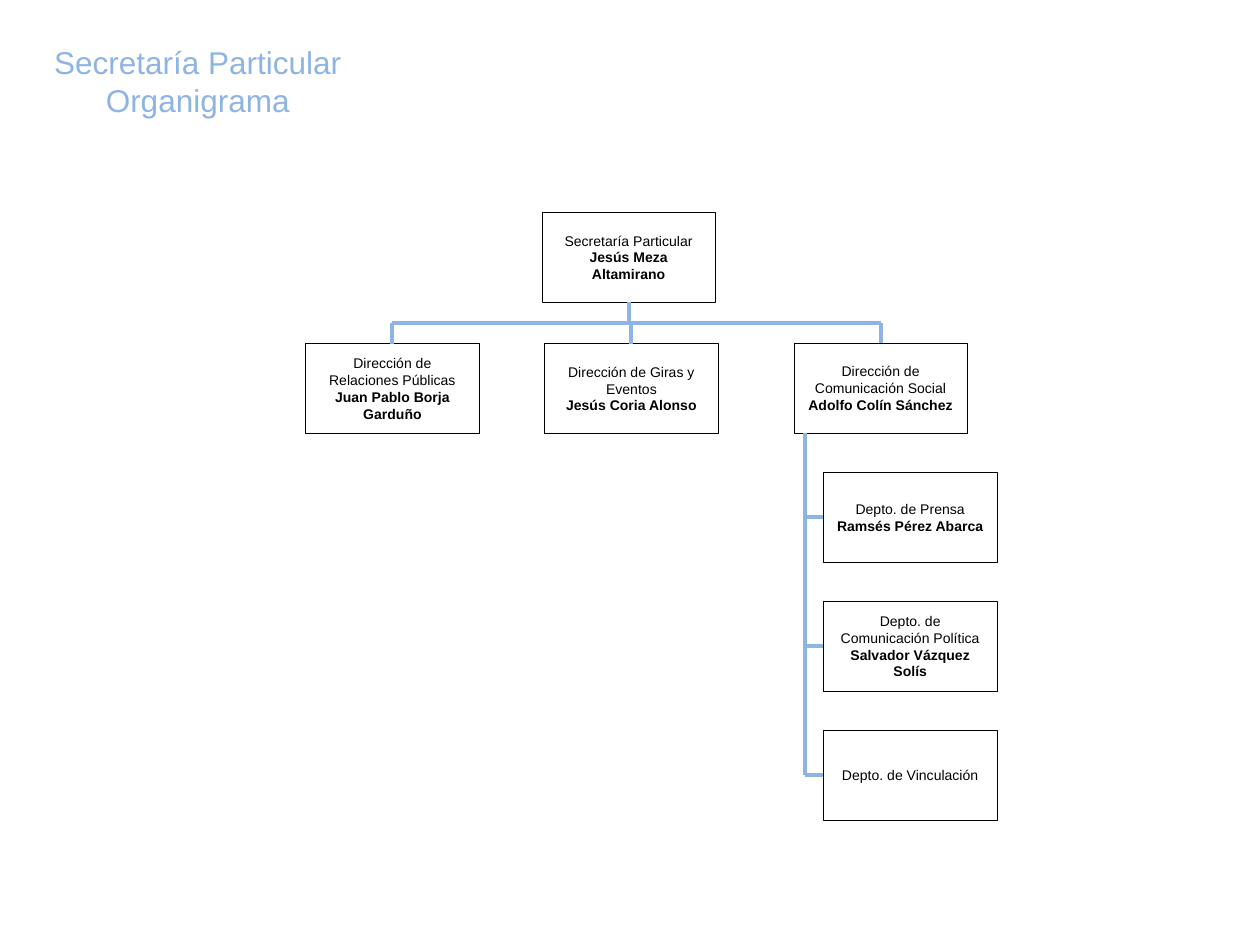
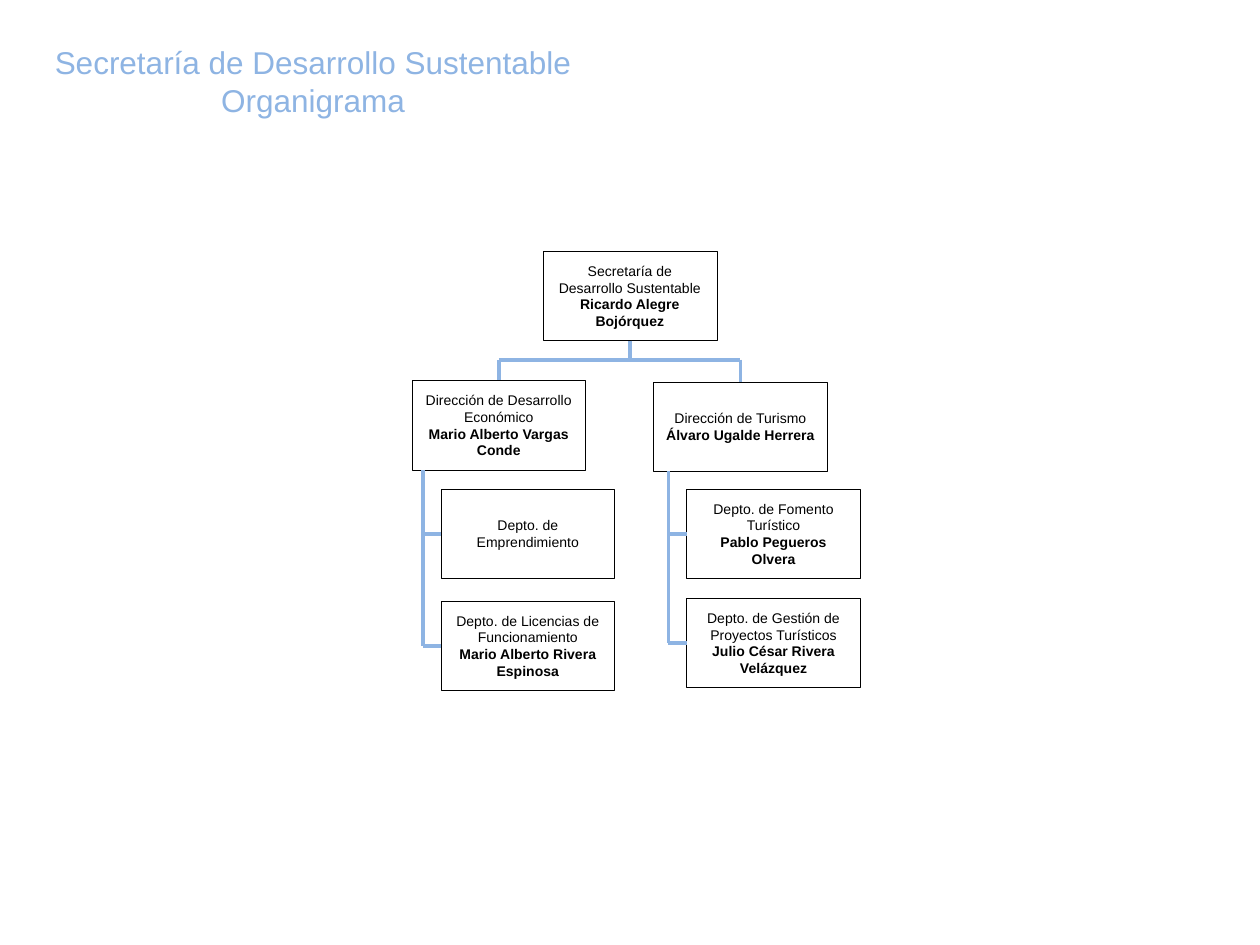
from dataclasses import dataclass

import pptx
import pptx.dml.color
import pptx.enum.shapes
import pptx.enum.text
import pptx.oxml
import pptx.oxml.ns
import pptx.presentation
import pptx.shapes.autoshape
import pptx.shapes.connector
import pptx.slide
import pptx.text.text
import pptx.util

Pt = pptx.util.Pt
RGBColor = pptx.dml.color.RGBColor
TOP, LEFT, BOTTOM = 0, 1, 2
TITLE_ONLY_LAYOUT = 5


@dataclass(frozen=True)
class Theme:
    accent: RGBColor = RGBColor(0x8E, 0xB4, 0xE3)
    ink: RGBColor = RGBColor(0, 0, 0)
    paper: RGBColor = RGBColor(255, 255, 255)
    font: str = "Arial"
    title_size: float = 18
    box_size: float = 8
    border_width: float = 0.25
    link_width: float = 2.25
    box_width: float = 99.3
    box_height: float = 51.2
    title_top: float = 20.9
    title_height: float = 51.1


@dataclass(frozen=True)
class Post:
    office: str
    holder: str = ""


@dataclass(frozen=True)
class Departments:
    spine: float
    left: float
    top: float
    pitch: float
    posts: tuple[Post, ...]


@dataclass(frozen=True)
class Direction:
    post: Post
    left: float
    top: float
    departments: Departments | None = None


@dataclass(frozen=True)
class Chart:
    title: str
    title_left: float
    title_width: float
    head: Direction
    bus: float
    directions: tuple[Direction, ...]


THEME = Theme()

CHARTS = (
    Chart(
        "Secretaría Particular", 22.3, 181.4,
        Direction(Post("Secretaría Particular", "Jesús Meza Altamirano"), 309.6, 121.4),
        184.7,
        (
            Direction(Post("Dirección de Relaciones Públicas", "Juan Pablo Borja Garduño"), 174.6, 196.4),
            Direction(Post("Dirección de Giras y Eventos", "Jesús Coria Alonso"), 311.2, 196.4),
            Direction(
                Post("Dirección de Comunicación Social", "Adolfo Colín Sánchez"), 453.6, 196.2,
                Departments(460.1, 470.5, 270, 73.7, (
                    Post("Depto. de Prensa", "Ramsés Pérez Abarca"),
                    Post("Depto. de Comunicación Política", "Salvador Vázquez Solís"),
                    Post("Depto. de Vinculación"),
                )),
            ),
        ),
    ),
    Chart(
        "Secretaría de Desarrollo Sustentable", 21.6, 314.6,
        Direction(Post("Secretaría de Desarrollo Sustentable", "Ricardo Alegre Bojórquez"), 310.3, 143.5),
        205.5,
        (
            Direction(
                Post("Dirección de Desarrollo Económico", "Mario Alberto Vargas Conde"), 235.4, 217.4,
                Departments(241.9, 252, 279.4, 64, (
                    Post("Depto. de Emprendimiento"),
                    Post("Depto. de Licencias de Funcionamiento", "Mario Alberto Rivera Espinosa"),
                )),
            ),
            Direction(
                Post("Dirección de Turismo", "Álvaro Ugalde Herrera"), 373.5, 218.2,
                Departments(382, 392.4, 279.4, 62.4, (
                    Post("Depto. de Fomento Turístico", "Pablo Pegueros Olvera"),
                    Post("Depto. de Gestión de Proyectos Turísticos", "Julio César Rivera Velázquez"),
                )),
            ),
        ),
    ),
)


def add_line_of_text(
    paragraph: pptx.text.text._Paragraph, text: str, size: float, color: RGBColor, bold: bool = False
) -> None:
    paragraph.alignment = pptx.enum.text.PP_ALIGN.CENTER
    run = paragraph.add_run()
    run.text = text
    run.font.name = THEME.font
    run.font.size = Pt(size)
    run.font.bold = bold
    run.font.color.rgb = color


def draw_title(slide: pptx.slide.Slide, chart: Chart) -> None:
    title = slide.shapes.title
    title.left, title.top = Pt(chart.title_left), Pt(THEME.title_top)
    title.width, title.height = Pt(chart.title_width), Pt(THEME.title_height)
    frame = title.text_frame
    frame.word_wrap = True
    frame.auto_size = pptx.enum.text.MSO_AUTO_SIZE.NONE
    frame.vertical_anchor = pptx.enum.text.MSO_ANCHOR.TOP
    add_line_of_text(frame.paragraphs[0], chart.title, THEME.title_size, THEME.accent)
    add_line_of_text(frame.add_paragraph(), "Organigrama", THEME.title_size, THEME.accent)


def draw_post(slide: pptx.slide.Slide, post: Post, left: float, top: float) -> pptx.shapes.autoshape.Shape:
    box = slide.shapes.add_shape(
        pptx.enum.shapes.MSO_SHAPE.RECTANGLE,
        Pt(left), Pt(top), Pt(THEME.box_width), Pt(THEME.box_height),
    )
    box.shadow.inherit = False
    box.fill.solid()
    box.fill.fore_color.rgb = THEME.paper
    box.line.color.rgb = THEME.ink
    box.line.width = Pt(THEME.border_width)
    frame = box.text_frame
    frame.word_wrap = True
    frame.vertical_anchor = pptx.enum.text.MSO_ANCHOR.MIDDLE
    add_line_of_text(frame.paragraphs[0], post.office, THEME.box_size, THEME.ink)
    if post.holder:
        add_line_of_text(frame.add_paragraph(), post.holder, THEME.box_size, THEME.ink, bold=True)
    return box


def draw_link(
    slide: pptx.slide.Slide, start_x: float, start_y: float, end_x: float, end_y: float
) -> pptx.shapes.connector.Connector:
    link = slide.shapes.add_connector(
        pptx.enum.shapes.MSO_CONNECTOR.STRAIGHT, Pt(start_x), Pt(start_y), Pt(end_x), Pt(end_y)
    )
    link.line.color.rgb = THEME.accent
    link.line.width = Pt(THEME.link_width)
    properties = link._element.spPr
    properties.append(pptx.oxml.parse_xml(f"<a:effectLst {pptx.oxml.ns.nsdecls('a')}/>"))
    return link


def draw_departments(slide: pptx.slide.Slide, departments: Departments, spine_top: float) -> None:
    middle = departments.top + THEME.box_height / 2
    spine_bottom = middle + departments.pitch * (len(departments.posts) - 1)
    draw_link(slide, departments.spine, spine_top, departments.spine, spine_bottom)
    for index, post in enumerate(departments.posts):
        offset = index * departments.pitch
        box = draw_post(slide, post, departments.left, departments.top + offset)
        branch = draw_link(slide, departments.spine, middle + offset, departments.left, middle + offset)
        branch.end_connect(box, LEFT)


def draw_chart(slide: pptx.slide.Slide, chart: Chart) -> None:
    draw_title(slide, chart)
    half_width = THEME.box_width / 2
    head = chart.head
    head_box = draw_post(slide, head.post, head.left, head.top)
    trunk_x = head.left + half_width
    trunk = draw_link(slide, trunk_x, head.top + THEME.box_height, trunk_x, chart.bus)
    trunk.begin_connect(head_box, BOTTOM)
    for direction in chart.directions:
        box = draw_post(slide, direction.post, direction.left, direction.top)
        drop_x = direction.left + half_width
        drop = draw_link(slide, drop_x, chart.bus, drop_x, direction.top)
        drop.end_connect(box, TOP)
        if direction.departments:
            draw_departments(slide, direction.departments, direction.top + THEME.box_height)
    first, last = chart.directions[0], chart.directions[-1]
    draw_link(slide, first.left + half_width, chart.bus, last.left + half_width, chart.bus)


def main() -> None:
    presentation = pptx.Presentation()
    presentation.slide_width, presentation.slide_height = Pt(720), Pt(540)
    for chart in CHARTS:
        slide = presentation.slides.add_slide(presentation.slide_layouts[TITLE_ONLY_LAYOUT])
        draw_chart(slide, chart)
    presentation.save("out.pptx")


if __name__ == "__main__":
    main()
